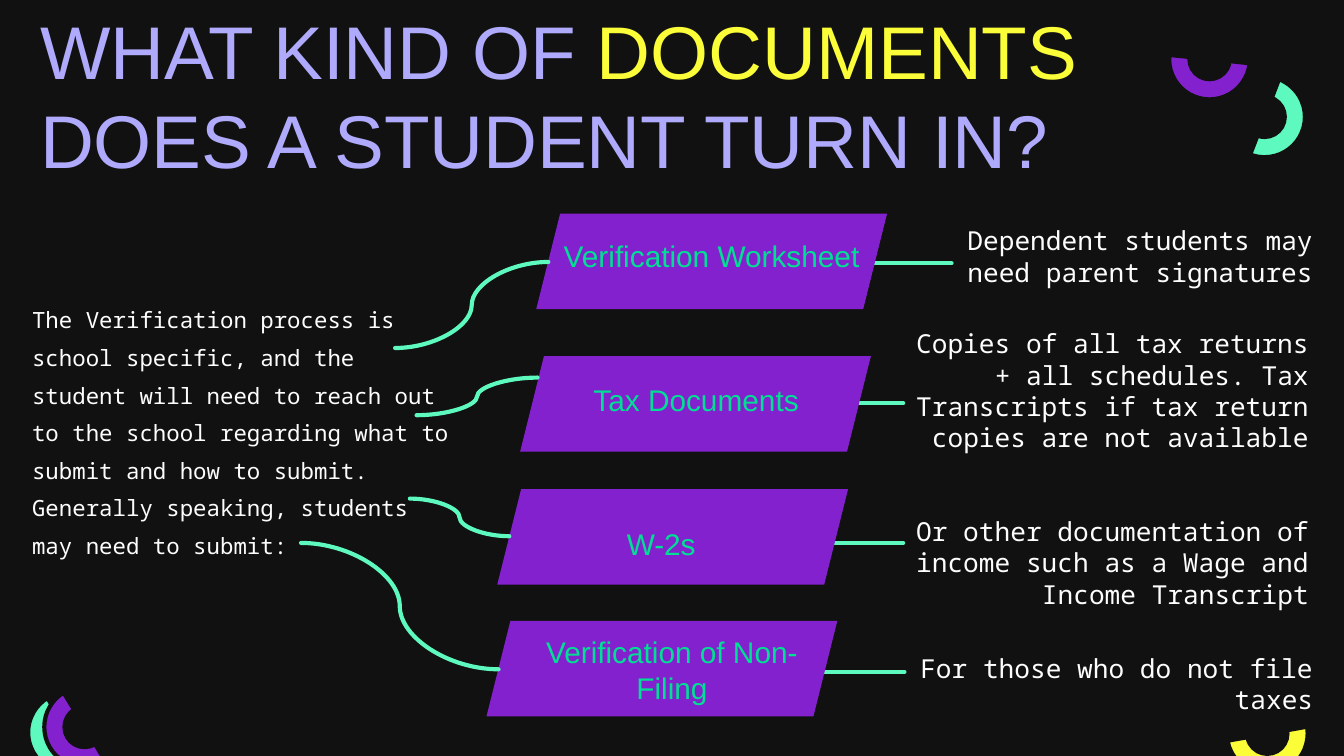
from pptx import Presentation
from pptx.dml.color import RGBColor
from pptx.enum.shapes import MSO_CONNECTOR as Link, MSO_SHAPE as Shape
from pptx.enum.text import MSO_ANCHOR as Anchor, PP_ALIGN as Align
from pptx.oxml.ns import qn
from pptx.util import Inches, Pt
from lxml.etree import SubElement

COLOURS = {
    "ground": "111111", "purple": "8421CE", "mint": "5DF9BE", "yellow": "FAFD37",
    "lilac": "B0AAFC", "green": "00DF93", "white": "FDFDFD",
}
FORMATS = {
    "title": {"size": Pt(40), "name": "Arial"},
    "label": {"size": Pt(16), "name": "Arial"},
    "detail": {"size": Pt(14), "name": "Noto Sans Mono"},
    "intro": {"size": Pt(12), "name": "Noto Sans Mono"},
}
CELL = 0.1  # grid pitch in inches: 100 columns by 56.25 rows
COLUMNS, ROWS = 100, 56.25
CARD_SIZE = (26.1, 7.1)
TEXT_HEIGHT = 8.1
RING_RADIUS = 3

# centre column, centre row, start angle, colour
RINGS = [
    (90, 4.4, 5.9, "purple"),
    (94.1, 8.7, 290.9, "mint"),
    (5.1, 54.5, 58.6, "mint"),
    (6.3, 54.1, 58.6, "purple"),
    (94.3, 54.6, 350, "yellow"),
]
# label, label area (left, top, width), card corner, detail, detail corner,
# rule (start, end, row), curve (from, to)
DOCUMENTS = [
    ("Verification Worksheet", (39.9, 15, 26.1), (39.9, 15.9),
     "Dependent students may need parent signatures", (65.9, 15),
     (55.3, 70.8, 19.6), ((29.4, 25.9), (40.8, 19.5))),
    ("Tax Documents", (39.8, 25.7, 24), (38.7, 26.5),
     "Copies of all tax returns + all schedules. Tax Transcripts if tax return "
     "copies are not available", (65.6, 25),
     (51.7, 67.2, 30), ((31, 30.9), (40, 28.1))),
    ("W-2s", (37.2, 36.4, 24), (37, 36.4),
     "Or other documentation of income such as a Wage and Income Transcript",
     (65.6, 37.8), (51.7, 67.2, 40.4), ((30.5, 37.1), (37.9, 39.9))),
    ("Verification of Non-Filing", (38, 45.8, 24), (36.2, 46.2),
     "For those who do not file taxes", (65.9, 46.8),
     (51.7, 67.3, 50), ((22.4, 40.4), (37.1, 49.8))),
]
INTRO = ("The Verification process is school specific, and the student will need to "
         "reach out to the school regarding what to submit and how to submit. "
         "Generally speaking, students may need to submit:")


def grid(*cells):
    return [Inches(cell * CELL) for cell in cells]


def colour(name):
    return RGBColor.from_string(COLOURS[name])


def add_filled(slide, preset, area, fill):
    shape = slide.shapes.add_shape(preset, *grid(*area))
    shape.shadow.inherit = False
    shape.fill.solid()
    shape.fill.fore_color.rgb = colour(fill)
    shape.line.fill.background()
    return shape


def add_ring(slide, column, row, start, fill):
    """Half ring running clockwise from the start angle, in degrees."""
    area = (column - RING_RADIUS, row - RING_RADIUS, 2 * RING_RADIUS, 2 * RING_RADIUS)
    ring = add_filled(slide, Shape.BLOCK_ARC, area, fill)
    ring.line.color.rgb = colour("ground")
    ring.line.width = Pt(2.25)
    # Angles are stored in 60000ths of a degree, adjustments in 100000ths.
    for index, value in enumerate((start * 0.6, (start + 180) % 360 * 0.6, 0.25)):
        ring.adjustments[index] = value


def add_link(slide, start, end):
    link = slide.shapes.add_connector(Link.CURVE, *grid(*start, *end))
    link.line.color.rgb = colour("mint")
    link.line.width = Pt(2.25)
    properties = link._element.spPr
    properties.find(qn("a:ln")).set("cap", "rnd")
    SubElement(properties, qn("a:effectLst"))


def add_text(slide, area, spans, style, align=Align.LEFT, anchor=Anchor.MIDDLE, spacing=1.0):
    """Text box with one paragraph; spans are (text, colour) pairs."""
    box = slide.shapes.add_textbox(*grid(*area))
    frame = box.text_frame
    layout = {"word_wrap": True, "vertical_anchor": anchor}
    layout.update({f"margin_{side}": Inches(0.1) for side in ("left", "top", "right", "bottom")})
    for name, value in layout.items():
        setattr(frame, name, value)
    para = frame.paragraphs[0]
    para.alignment = align
    para.line_spacing = spacing
    for text, ink in spans:
        span = para.add_run()
        span.text = text
        for name, value in FORMATS[style].items():
            setattr(span.font, name, value)
        span.font.color.rgb = colour(ink)


def add_document(slide, label, label_area, corner, detail, detail_corner, rule, curve):
    start, end, row = rule
    add_link(slide, (start, row), (end, row))
    add_filled(slide, Shape.PARALLELOGRAM, (*corner, *CARD_SIZE), "purple")
    add_text(slide, (*label_area, TEXT_HEIGHT), [(label, "green")], "label", Align.CENTER)
    add_text(slide, (*detail_corner, 32.8, TEXT_HEIGHT), [(detail, "white")],
             "detail", Align.RIGHT)
    add_link(slide, *curve)


def main():
    deck = Presentation()
    deck.slide_width, deck.slide_height = grid(COLUMNS, ROWS)
    slide = deck.slides.add_slide(deck.slide_layouts[6])
    slide.background.fill.solid()
    slide.background.fill.fore_color.rgb = colour("ground")

    for ring in RINGS:
        add_ring(slide, *ring)
    add_text(slide, (2, 3.9, 84.3, 6.2),
             [("WHAT KIND OF ", "lilac"), ("DOCUMENTS ", "yellow"),
              ("DOES A STUDENT TURN IN?", "lilac")], "title")
    add_text(slide, (1.4, 21, 33.1, 20.9), [(INTRO, "white")], "intro",
             anchor=Anchor.TOP, spacing=1.4)
    for document in reversed(DOCUMENTS):
        add_document(slide, *document)
    deck.save("out.pptx")


if __name__ == "__main__":
    main()
